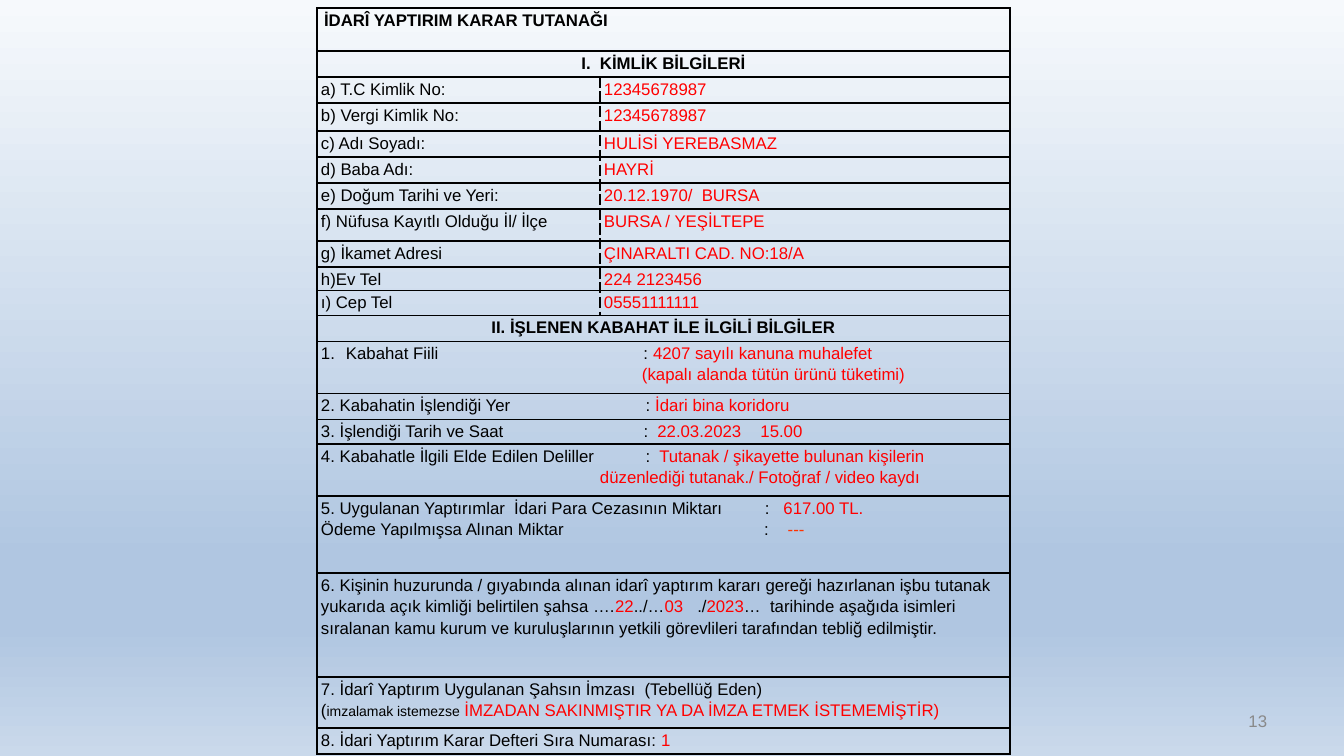
from dataclasses import dataclass

from lxml.etree import SubElement
from pptx import Presentation
from pptx.dml.color import RGBColor
from pptx.enum.text import MSO_ANCHOR, PP_ALIGN
from pptx.oxml.ns import qn
from pptx.util import Emu, Pt


@dataclass(frozen=True)
class Theme:
    font: str = "Arial"
    ink: str = "000000"
    answer: str = "FF0000"
    unpaid: str = "FF3300"
    number: str = "898989"
    body: int = 12
    small: int = 10
    border: int = 1
    spacing: float = 1.15
    space_width: float = 0.28
    backdrop: tuple = ((0, "F6F9FC"), (74, "B0C6E1"), (83, "B0C6E1"), (100, "CAD9EB"))


@dataclass(frozen=True)
class Line:
    runs: tuple
    indent: int = 0
    centred: bool = False
    bold: bool = False


THEME = Theme()
PX = 9071
SLIDE_SIZE = (1344, 756)
FORM_AT = (317, 8)
COLUMNS = (283, 410)
CELL_INSET = 4
PAGE_NUMBER = "13"
PAGE_BOX = (964, 701, 313, 40)


def ask(text):
    return text, THEME.ink, THEME.body


def answer(text):
    return text, THEME.answer, THEME.body


def gap(width):
    return " ", THEME.ink, THEME.body, width


def field(label, before_colon, after_colon, *reply):
    return Line((ask(label), gap(before_colon), ask(":"), gap(after_colon), *reply))


HEADER = [
    (43, [Line((ask("İDARÎ YAPTIRIM KARAR TUTANAĞI"),), indent=3, bold=True)]),
    (26, [Line((ask("I.  KİMLİK BİLGİLERİ"),), centred=True, bold=True)]),
]
IDENTITY = [
    (26, "a) T.C Kimlik No:", "12345678987"),
    (28, "b) Vergi Kimlik No:", "12345678987"),
    (26, "c) Adı Soyadı:", "HULİSİ YEREBASMAZ"),
    (26, "d) Baba Adı:", "HAYRİ"),
    (26, "e) Doğum Tarihi ve Yeri:", "20.12.1970/  BURSA"),
    (32, "f) Nüfusa Kayıtlı Olduğu İl/ İlçe", "BURSA / YEŞİLTEPE"),
    (26, "g) İkamet Adresi", "ÇINARALTI CAD. NO:18/A"),
    (23, "h)Ev Tel", "224 2123456"),
    (25, "ı) Cep Tel", "05551111111"),
]
OFFENCE = [
    (26, [Line((ask("II. İŞLENEN KABAHAT İLE İLGİLİ BİLGİLER"),), centred=True, bold=True)]),
    (52, [
        Line((ask("1."), gap(11), *field(
            "Kabahat Fiili", 205, 5, answer("4207 sayılı kanuna muhalefet")).runs)),
        Line((answer("(kapalı alanda tütün ürünü tüketimi)"),), indent=321),
    ]),
    (26, [field("2. Kabahatin İşlendiği Yer", 135, 5, answer("İdari bina koridoru"))]),
    (25, [field("3. İşlendiği Tarih ve Saat", 140, 9,
                answer("22.03.2023"), gap(19), answer("15.00"))]),
    (52, [
        field("4. Kabahatle İlgili Elde Edilen Deliller", 51, 9,
              answer("Tutanak / şikayette bulunan kişilerin")),
        Line((answer("düzenlediği tutanak./ Fotoğraf / video kaydı"),), indent=279),
    ]),
    (77, [
        field("5. Uygulanan Yaptırımlar  İdari Para Cezasının Miktarı", 42, 14,
              answer("617.00 TL.")),
        field("Ödeme Yapılmışsa Alınan Miktar", 200, 19, ("---", THEME.unpaid, THEME.body)),
    ]),
    (104, [Line((
        ask("6. Kişinin huzurunda / gıyabında alınan idarî yaptırım kararı gereği hazırlanan "
            "işbu tutanak yukarıda açık kimliği belirtilen şahsa …."),
        answer("22"), ask("../…"), answer("03"), gap(14), ask("./"), answer("2023"),
        ask("…  tarihinde aşağıda isimleri sıralanan kamu kurum ve kuruluşlarının yetkili "
            "görevlileri tarafından tebliğ edilmiştir."),
    ))]),
    (51, [
        Line((ask("7. İdarî Yaptırım Uygulanan Şahsın İmzası  (Tebellüğ Eden)"),)),
        Line((ask("("), ("imzalamak istemezse", THEME.ink, THEME.small),
              answer(" İMZADAN SAKINMIŞTIR YA DA İMZA ETMEK İSTEMEMİŞTİR)"))),
    ]),
    (26, [Line((ask("8. İdari Yaptırım Karar Defteri Sıra Numarası: "), answer("1")))]),
]


def px(length):
    return Emu(length * PX)


def add_run(paragraph, text, color, size, width=0, bold=False):
    run = paragraph.add_run()
    run.text = text
    run.font.name = THEME.font
    run.font.size = Pt(size)
    run.font.bold = bold
    run.font.color.rgb = RGBColor.from_string(color)
    if width:
        extra = px(width).pt - size * THEME.space_width
        run._r.get_or_add_rPr().set("spc", str(round(extra * 100)))


def write_lines(frame, lines):
    for index, line in enumerate(lines):
        paragraph = frame.add_paragraph() if index else frame.paragraphs[0]
        paragraph.alignment = PP_ALIGN.CENTER if line.centred else PP_ALIGN.LEFT
        paragraph.line_spacing = THEME.spacing
        properties = paragraph._p.get_or_add_pPr()
        properties.set("marL", str(px(line.indent)))
        properties.set("indent", "0")
        for run in line.runs:
            add_run(paragraph, *run, bold=line.bold)


def style_cell(cell, dashed_side):
    cell.margin_left = cell.margin_right = px(CELL_INSET)
    cell.margin_top = cell.margin_bottom = 0
    properties = cell._tc.get_or_add_tcPr()
    for side in ("lnL", "lnR", "lnT", "lnB"):
        border = SubElement(properties, qn(f"a:{side}"), w=str(Pt(THEME.border)))
        SubElement(SubElement(border, qn("a:solidFill")), qn("a:srgbClr"), val=THEME.ink)
        SubElement(border, qn("a:prstDash"), val="dash" if side == dashed_side else "solid")
    cell.fill.background()


def paint_background(slide):
    fill = slide.background.fill
    fill.gradient()
    fill.gradient_angle = 270
    stops = slide.element.find(".//" + qn("a:gsLst"))
    for stop in list(stops):
        stops.remove(stop)
    for percent, color in THEME.backdrop:
        stop = SubElement(stops, qn("a:gs"), pos=str(percent * 1000))
        SubElement(stop, qn("a:srgbClr"), val=color)


def add_form(slide):
    identity = [(height, [Line((ask(label),))], [Line((answer(value),))])
                for height, label, value in IDENTITY]
    rows = HEADER + identity + OFFENCE
    size = (sum(COLUMNS), sum(row[0] for row in rows))
    form = slide.shapes.add_table(len(rows), len(COLUMNS), *map(px, FORM_AT + size)).table
    form.first_row = form.horz_banding = False
    for column, width in zip(form.columns, COLUMNS):
        column.width = px(width)
    for index, (height, *entries) in enumerate(rows):
        form.rows[index].height = px(height)
        paired = len(entries) == 2
        for column, side in enumerate(("lnR", "lnL")):
            style_cell(form.cell(index, column), side if paired else None)
        if not paired:
            form.cell(index, 0).merge(form.cell(index, 1))
        for column, lines in enumerate(entries):
            write_lines(form.cell(index, column).text_frame, lines)


def add_page_number(slide):
    frame = slide.shapes.add_textbox(*map(px, PAGE_BOX)).text_frame
    frame.word_wrap = True
    frame.vertical_anchor = MSO_ANCHOR.MIDDLE
    frame.paragraphs[0].alignment = PP_ALIGN.RIGHT
    add_run(frame.paragraphs[0], PAGE_NUMBER, THEME.number, THEME.body)


def main():
    deck = Presentation()
    deck.slide_width, deck.slide_height = map(px, SLIDE_SIZE)
    slide = deck.slides.add_slide(deck.slide_layouts[6])
    paint_background(slide)
    add_page_number(slide)
    add_form(slide)
    deck.save("out.pptx")


if __name__ == "__main__":
    main()
